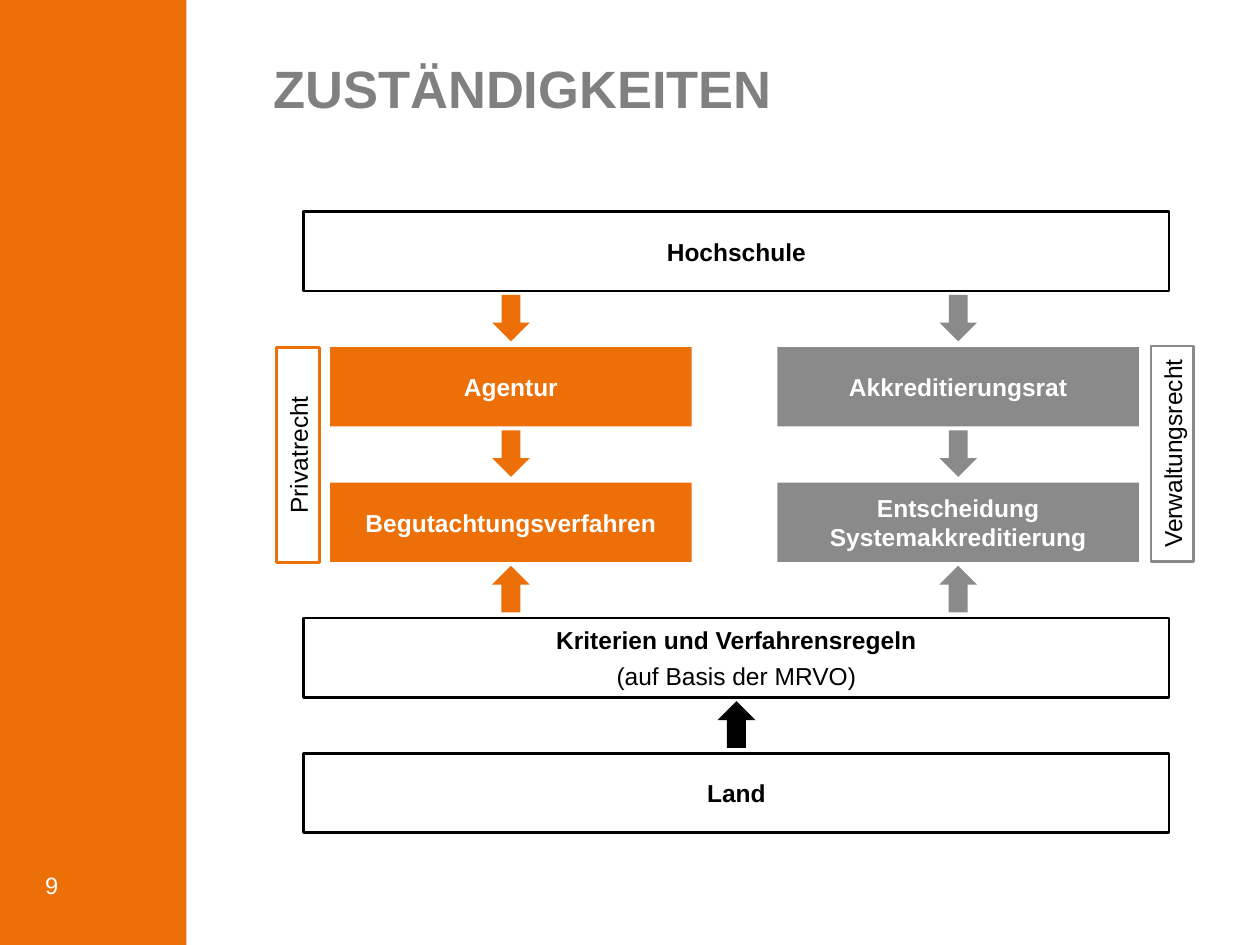
from pptx import Presentation
from pptx.dml.color import RGBColor
from pptx.enum import shapes, text
from pptx.util import Inches, Pt

ORANGE = RGBColor(0xEC, 0x70, 0x07)
GREY = RGBColor(0x8A, 0x8A, 0x8A)
TITLE_GREY = RGBColor(0x80, 0x80, 0x80)
BLACK = RGBColor(0, 0, 0)
WHITE = RGBColor(0xFF, 0xFF, 0xFF)

SHAPE = shapes.MSO_SHAPE
ROW_TOP, ROW_PITCH, BOX_HEIGHT = 1.68, 1.075, 0.63
ARROW_WIDTH, ARROW_HEIGHT, ARROW_OFFSET = 0.3, 0.37, 0.66
WIDE_LEFT, WIDE_WIDTH = 2.41, 6.87
COLUMN_WIDTH = 2.87


def row_y(row):
    return ROW_TOP + row * ROW_PITCH


def add_run(p, wording, size, color, bold=False):
    r = p.add_run()
    r.text = wording
    r.font.name = "Arial"
    r.font.size = Pt(size)
    r.font.bold = bold
    r.font.color.rgb = color


def add_shape(s, kind, left, top, width, height, fill=None, line=None):
    sp = s.shapes.add_shape(kind, Inches(left), Inches(top), Inches(width), Inches(height))
    sp.shadow.inherit = False
    if fill is None:
        sp.fill.background()
    else:
        sp.fill.solid()
        sp.fill.fore_color.rgb = fill
    if line is None:
        sp.line.fill.background()
    else:
        sp.line.color.rgb = line
        sp.line.width = Pt(1.5)
    return sp


def write_lines(sp, lines, color):
    tf = sp.text_frame
    tf.word_wrap = True
    tf.vertical_anchor = text.MSO_ANCHOR.MIDDLE
    for i, (wording, bold) in enumerate(lines):
        p = tf.add_paragraph() if i else tf.paragraphs[0]
        p.alignment = text.PP_ALIGN.CENTER
        p.space_before = Pt(2 if i else 0)
        p.space_after = Pt(2)
        add_run(p, wording, 14, color, bold)


def add_wide_box(s, row, *lines):
    sp = add_shape(s, SHAPE.RECTANGLE, WIDE_LEFT, row_y(row), WIDE_WIDTH, BOX_HEIGHT, line=BLACK)
    write_lines(sp, lines, BLACK)


def add_arrow(s, center, row, color, down=False):
    sp = add_shape(s, SHAPE.UP_ARROW, center - ARROW_WIDTH / 2, row_y(row) + ARROW_OFFSET,
                   ARROW_WIDTH, ARROW_HEIGHT, fill=color)
    sp.rotation = 180 if down else 0


def add_column(s, left, color, labels):
    center = left + COLUMN_WIDTH / 2
    for row, label in enumerate(labels, 1):
        sp = add_shape(s, SHAPE.RECTANGLE, left, row_y(row), COLUMN_WIDTH, BOX_HEIGHT, fill=color)
        write_lines(sp, [(label, True)], WHITE)
        add_arrow(s, center, row - 1, color, down=True)
    add_arrow(s, center, len(labels), color)


def add_side_label(s, left, top, wording, color):
    sp = add_shape(s, SHAPE.RECTANGLE, left, top, 1.71, 0.34, fill=WHITE, line=color)
    sp.rotation = 270
    write_lines(sp, [(wording, False)], BLACK)


def add_title(s, wording):
    title = s.shapes.title
    title.left, title.top = Inches(2.07), Inches(0.45)
    title.width, title.height = Inches(7.68), Inches(1.38)
    tf = title.text_frame
    tf.word_wrap = True
    tf.vertical_anchor = text.MSO_ANCHOR.TOP
    p = tf.paragraphs[0]
    p.alignment = text.PP_ALIGN.LEFT
    p.line_spacing = 0.9
    p.space_before = Pt(0)
    add_run(p, wording, 30, TITLE_GREY, True)


def add_page_number(s, number):
    tf = s.shapes.add_textbox(Inches(0.26), Inches(6.65), Inches(0.92), Inches(0.54)).text_frame
    tf.word_wrap = True
    tf.vertical_anchor = text.MSO_ANCHOR.BOTTOM
    add_run(tf.paragraphs[0], number, 13.5, WHITE)


def main():
    prs = Presentation()
    prs.slide_width, prs.slide_height = Inches(10), Inches(7.5)
    s = prs.slides.add_slide(prs.slide_layouts[5])
    add_shape(s, SHAPE.RECTANGLE, 0, 0, 1.48, 7.5, fill=ORANGE)
    add_title(s, "ZUSTÄNDIGKEITEN")
    add_page_number(s, "9")
    add_wide_box(s, 0, ("Hochschule", True))
    add_wide_box(s, 3, ("Kriterien und Verfahrensregeln", True), ("(auf Basis der MRVO)", False))
    add_wide_box(s, 4, ("Land", True))
    add_arrow(s, WIDE_LEFT + WIDE_WIDTH / 2, 3, BLACK)
    add_column(s, 2.62, ORANGE, ["Agentur", "Begutachtungsverfahren"])
    add_column(s, 6.17, GREY, ["Akkreditierungsrat", "Entscheidung Systemakkreditierung"])
    add_side_label(s, 1.51, 3.44, "Privatrecht", ORANGE)
    add_side_label(s, 8.45, 3.43, "Verwaltungsrecht", GREY)
    prs.save("out.pptx")


if __name__ == "__main__":
    main()
